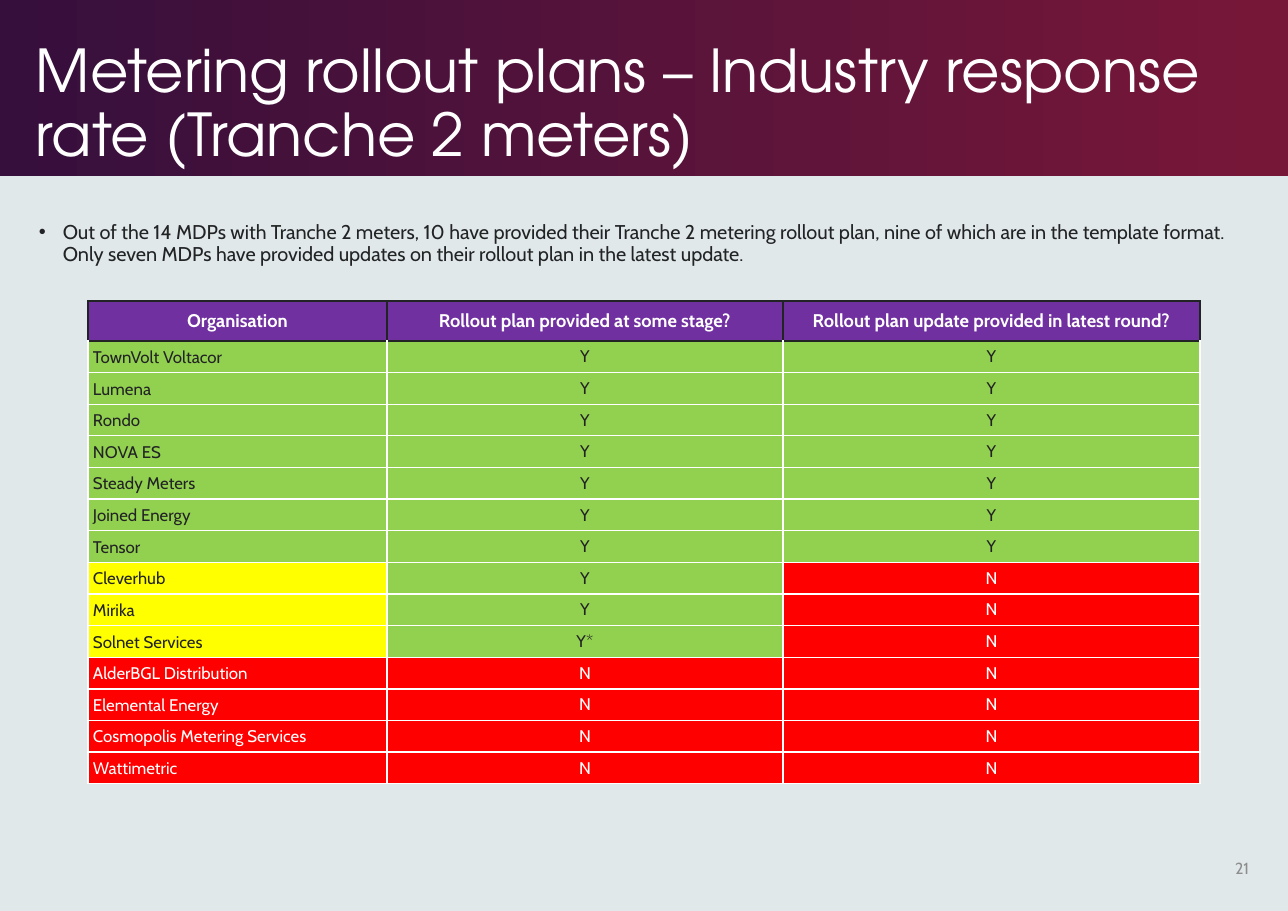
from dataclasses import dataclass

from lxml import etree
from pptx import Presentation
from pptx.dml.color import RGBColor
from pptx.enum.shapes import MSO_SHAPE
from pptx.enum.text import MSO_ANCHOR, PP_ALIGN
from pptx.oxml.ns import qn
from pptx.slide import Slide
from pptx.table import _Cell
from pptx.text.text import TextFrame
from pptx.util import Emu, Pt

EMU_PER_PX = 914400 / 110.2
PAGE_WIDTH, PAGE_HEIGHT = 1288, 911
LEFT, CENTER, RIGHT = PP_ALIGN.LEFT, PP_ALIGN.CENTER, PP_ALIGN.RIGHT
TOP, MIDDLE, BOTTOM = MSO_ANCHOR.TOP, MSO_ANCHOR.MIDDLE, MSO_ANCHOR.BOTTOM
RECTANGLE = MSO_SHAPE.RECTANGLE

BODY_FONT, TITLE_FONT = "Cabin", "TeX Gyre Adventor"
DARK, WHITE, GREY = "222324", "FFFFFF", "8D8D8E"
BACKGROUND, PURPLE = "E0E8EA", "7030A0"
GREEN, YELLOW, RED = "92D050", "FFFF00", "FF0000"
BANNER_COLOURS = ((0, "360F3C"), (0.99, "771738"))

TABLE_LEFT, TABLE_TOP = 88, 301
COLUMN_WIDTHS = (299, 396, 417)
HEADER_HEIGHT, ROWS_HEIGHT = 40, 443
CELL_MARGIN = 5
HEADINGS = (
    "Organisation",
    "Rollout plan provided at some stage?",
    "Rollout plan update provided in latest round?",
)


@dataclass(frozen=True)
class Response:
    organisation: str
    plan: str
    update: str

    def fills(self) -> tuple[str, str, str]:
        """Green for yes, red for no; the organisation is yellow when the answers differ."""
        plan, update = (GREEN if answer.startswith("Y") else RED
                        for answer in (self.plan, self.update))
        return plan if plan == update else YELLOW, plan, update


RESPONSES = (
    Response("TownVolt Voltacor", "Y", "Y"),
    Response("Lumena", "Y", "Y"),
    Response("Rondo", "Y", "Y"),
    Response("NOVA ES", "Y", "Y"),
    Response("Steady Meters", "Y", "Y"),
    Response("Joined Energy", "Y", "Y"),
    Response("Tensor", "Y", "Y"),
    Response("Cleverhub", "Y", "N"),
    Response("Mirika", "Y", "N"),
    Response("Solnet Services", "Y*", "N"),
    Response("AlderBGL Distribution", "N", "N"),
    Response("Elemental Energy", "N", "N"),
    Response("Cosmopolis Metering Services", "N", "N"),
    Response("Wattimetric", "N", "N"),
)


def px(length: int) -> Emu:
    return Emu(round(length * EMU_PER_PX))


def rgb(colour: str) -> RGBColor:
    return RGBColor.from_string(colour)


def write_text(frame: TextFrame, text: str, *, size: float, colour: str = DARK,
               font: str = BODY_FONT, bold: bool = False, align: PP_ALIGN = LEFT,
               line_spacing: float = 1.0, bullet_indent: int = 0) -> None:
    para = frame.paragraphs[0]
    if bullet_indent:
        properties = para._p.get_or_add_pPr()
        properties.set("marL", str(px(bullet_indent)))
        properties.set("indent", str(-px(bullet_indent)))
        etree.SubElement(properties, qn("a:buFont")).set("typeface", "Arial")
        etree.SubElement(properties, qn("a:buChar")).set("char", "•")
    para.alignment = align
    para.line_spacing = line_spacing
    span = para.add_run()
    span.text = text
    span.font.name = font
    span.font.size = Pt(size)
    span.font.bold = bold
    span.font.color.rgb = rgb(colour)


def add_text_box(page: Slide, left: int, top: int, width: int, height: int,
                 anchor: MSO_ANCHOR = TOP) -> TextFrame:
    frame = page.shapes.add_textbox(px(left), px(top), px(width), px(height)).text_frame
    frame.word_wrap = True
    frame.vertical_anchor = anchor
    return frame


def add_banner(page: Slide) -> None:
    banner = page.shapes.add_shape(RECTANGLE, 0, 0, px(PAGE_WIDTH), px(176))
    banner.shadow.inherit = False
    banner.line.fill.background()
    banner.fill.gradient()
    banner.fill.gradient_angle = 0
    for stop, (position, colour) in zip(banner.fill.gradient_stops, BANNER_COLOURS):
        stop.position = position
        stop.color.rgb = rgb(colour)


def style_cell(cell: _Cell, fill: str, border: str, top_border: str, anchor: MSO_ANCHOR) -> None:
    properties = cell._tc.get_or_add_tcPr()
    for side in "LRTB":
        line = etree.SubElement(properties, qn(f"a:ln{side}"), w=str(Pt(1)))
        solid = etree.SubElement(line, qn("a:solidFill"))
        colour = top_border if side == "T" else border
        etree.SubElement(solid, qn("a:srgbClr")).set("val", colour)
    cell.fill.solid()
    cell.fill.fore_color.rgb = rgb(fill)
    cell.vertical_anchor = anchor
    cell.margin_left = cell.margin_right = px(CELL_MARGIN)
    cell.margin_top = cell.margin_bottom = px(CELL_MARGIN)


def add_response_table(page: Slide) -> None:
    table = page.shapes.add_table(
        len(RESPONSES) + 1, len(HEADINGS), px(TABLE_LEFT), px(TABLE_TOP),
        px(sum(COLUMN_WIDTHS)), px(HEADER_HEIGHT + ROWS_HEIGHT)).table
    table.horz_banding = False
    for column, width in zip(table.columns, COLUMN_WIDTHS):
        column.width = px(width)
    for row in table.rows:
        row.height = Emu(px(ROWS_HEIGHT) // len(RESPONSES))
    table.rows[0].height = px(HEADER_HEIGHT)

    for column, heading in enumerate(HEADINGS):
        cell = table.cell(0, column)
        style_cell(cell, PURPLE, DARK, DARK, MIDDLE)
        write_text(cell.text_frame, heading, size=12, colour=WHITE, bold=True, align=CENTER)

    for row, response in enumerate(RESPONSES, start=1):
        texts = (response.organisation, response.plan, response.update)
        top_border = DARK if row == 1 else WHITE
        for column, (text, fill) in enumerate(zip(texts, response.fills())):
            cell = table.cell(row, column)
            style_cell(cell, fill, WHITE, top_border, MIDDLE if column else BOTTOM)
            write_text(cell.text_frame, text, size=11,
                       colour=WHITE if fill == RED else DARK,
                       align=CENTER if column else LEFT)


def main() -> None:
    deck = Presentation()
    deck.slide_width, deck.slide_height = px(PAGE_WIDTH), px(PAGE_HEIGHT)
    page = deck.slides.add_slide(deck.slide_layouts[6])
    page.background.fill.solid()
    page.background.fill.fore_color.rgb = rgb(BACKGROUND)

    add_banner(page)
    write_text(add_text_box(page, 28, 217, 1236, 70),
               "Out of the 14 MDPs with Tranche 2 meters, 10 have provided their Tranche 2 "
               "metering rollout plan, nine of which are in the template format. Only seven "
               "MDPs have provided updates on their rollout plan in the latest update.",
               size=13, line_spacing=0.9, bullet_indent=24)
    write_text(add_text_box(page, 25, 18, 1263, 157, BOTTOM),
               "Metering rollout plans – Industry response rate (Tranche 2 meters)",
               size=38.6, colour=WHITE, font=TITLE_FONT, line_spacing=0.9)
    write_text(add_text_box(page, 1200, 844, 60, 48, MIDDLE), "21",
               size=10.5, colour=GREY, align=RIGHT)
    add_response_table(page)
    deck.save("out.pptx")


if __name__ == "__main__":
    main()
